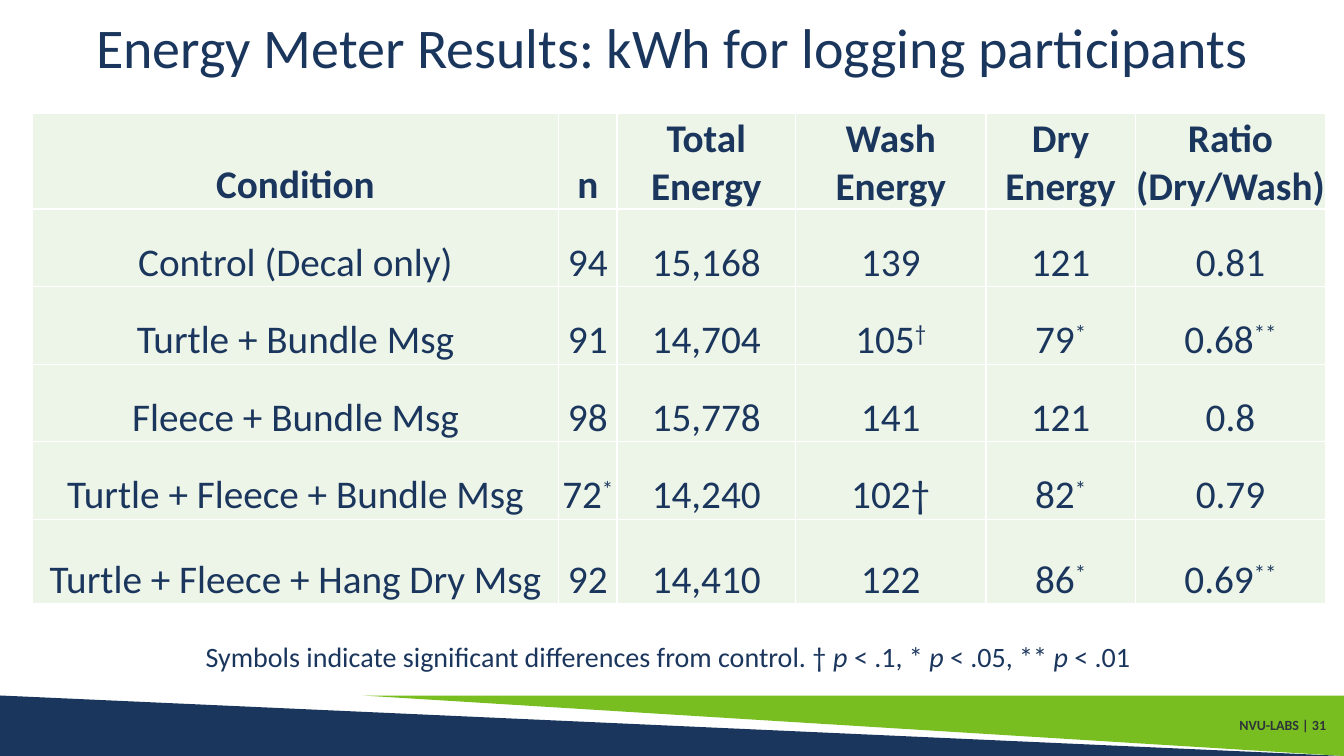
from lxml import etree
from pptx import Presentation
from pptx.dml.color import RGBColor
from pptx.enum import shapes, text
from pptx.oxml.ns import qn
from pptx.util import Inches, Pt

NAVY, GREEN, PALE, WHITE, DARK = "1B365D", "78BE20", "EDF4E8", "FFFFFF", "2E3438"
FONT = "Calibri"

TITLE = "Energy Meter Results: kWh for logging participants"
FOOTER = "NVU-LABS | 31"
# A caret starts the superscript part of a cell.
ROWS = [
    ("Condition", "n", "Total Energy", "Wash Energy", "Dry Energy", "Ratio (Dry/Wash)"),
    ("Control (Decal only)", "94", "15,168", "139", "121", "0.81"),
    ("Turtle + Bundle Msg", "91", "14,704", "105^†", "79^*", "0.68^**"),
    ("Fleece + Bundle Msg", "98", "15,778", "141", "121", "0.8"),
    ("Turtle + Fleece + Bundle Msg", "72^*", "14,240", "102†", "82^*", "0.79"),
    ("Turtle + Fleece + Hang Dry Msg", "92", "14,410", "122", "86^*", "0.69^**"),
]
COL_WIDTHS = [5.22, 0.58, 1.77, 1.89, 1.48, 1.89]
ROW_HEIGHTS = [0.86, 0.77, 0.77, 0.77, 0.77, 0.84]
# (text, italic)
NOTE = [
    ("Symbols indicate significant differences from control. † ", False),
    ("p ", True), ("< .1, * ", False),
    ("p", True), (" < .05, ** ", False),
    ("p", True), (" < .01", False),
]
# (left, width, rotation, colour)
WEDGES = [(0, 13.33, 0, NAVY), (3.6, 9.73, 180, GREEN)]


def rgb(value):
    return RGBColor.from_string(value)


def box(*lengths):
    return [Inches(v) for v in lengths]


def add_run(p, words, size, color=NAVY, bold=False, italic=False):
    r = p.add_run()
    r.text = words
    f = r.font
    f.name, f.size, f.bold, f.italic = FONT, Pt(size), bold, italic
    f.color.rgb = rgb(color)
    return r


def add_borders(cell, color, width):
    tcPr = cell._tc.get_or_add_tcPr()
    for side in ("lnL", "lnR", "lnT", "lnB"):
        ln = etree.SubElement(tcPr, qn(f"a:{side}"), w=str(Pt(width)))
        fill = etree.SubElement(ln, qn("a:solidFill"))
        etree.SubElement(fill, qn("a:srgbClr"), val=color)


def fill_cell(cell, words, bold):
    add_borders(cell, WHITE, 1)
    cell.fill.solid()
    cell.fill.fore_color.rgb = rgb(PALE)
    cell.vertical_anchor = text.MSO_ANCHOR.BOTTOM
    cell.margin_left = cell.margin_right = cell.margin_top = Inches(0.01)
    cell.margin_bottom = 0
    p = cell.text_frame.paragraphs[0]
    p.alignment = text.PP_ALIGN.CENTER
    value, _, mark = words.partition("^")
    add_run(p, value, 28, bold=bold)
    if mark:
        r = add_run(p, mark, 28, bold=bold)
        r.font._element.set("baseline", "30000")


def add_wedges(s):
    for left, width, rotation, color in WEDGES:
        sp = s.shapes.add_shape(shapes.MSO_SHAPE.RIGHT_TRIANGLE,
                                *box(left, 6.9, width, 0.6))
        sp.rotation = rotation
        sp.shadow.inherit = False
        sp.fill.solid()
        sp.fill.fore_color.rgb = rgb(color)
        sp.line.fill.background()


def add_title(s):
    sp = s.shapes.title
    sp.left, sp.top, sp.width, sp.height = box(0, 0, 13.33, 0.99)
    tf = sp.text_frame
    tf.vertical_anchor = text.MSO_ANCHOR.MIDDLE
    p = tf.paragraphs[0]
    p.alignment, p.line_spacing = text.PP_ALIGN.CENTER, 0.9
    add_run(p, TITLE, 40)


def add_footer(s):
    tf = s.shapes.add_textbox(*box(11.74, 7.02, 1.51, 0.37)).text_frame
    tf.word_wrap = True
    tf.vertical_anchor = text.MSO_ANCHOR.MIDDLE
    p = tf.paragraphs[0]
    p.alignment, p.line_spacing = text.PP_ALIGN.RIGHT, 0.9
    add_run(p, FOOTER, 10, DARK, bold=True)


def add_note(s):
    tf = s.shapes.add_textbox(*box(1.94, 6.3, 9.46, 0.44)).text_frame
    tf.word_wrap = False
    tf.auto_size = text.MSO_AUTO_SIZE.SHAPE_TO_FIT_TEXT
    for words, italic in NOTE:
        add_run(tf.paragraphs[0], words, 20, italic=italic)


def add_results(s):
    frame = s.shapes.add_table(len(ROWS), len(COL_WIDTHS), *box(
        0.32, 1.13, sum(COL_WIDTHS), sum(ROW_HEIGHTS)))
    table = frame.table
    table.horz_banding = False
    for column, width in zip(table.columns, COL_WIDTHS):
        column.width = Inches(width)
    for i, (row, height) in enumerate(zip(table.rows, ROW_HEIGHTS)):
        row.height = Inches(height)
        for cell, words in zip(row.cells, ROWS[i]):
            fill_cell(cell, words, bold=i == 0)


def main():
    prs = Presentation()
    prs.slide_width, prs.slide_height = box(13.33, 7.5)
    s = prs.slides.add_slide(prs.slide_layouts[5])
    add_wedges(s)
    add_footer(s)
    add_title(s)
    add_note(s)
    add_results(s)
    prs.save("out.pptx")


if __name__ == "__main__":
    main()
